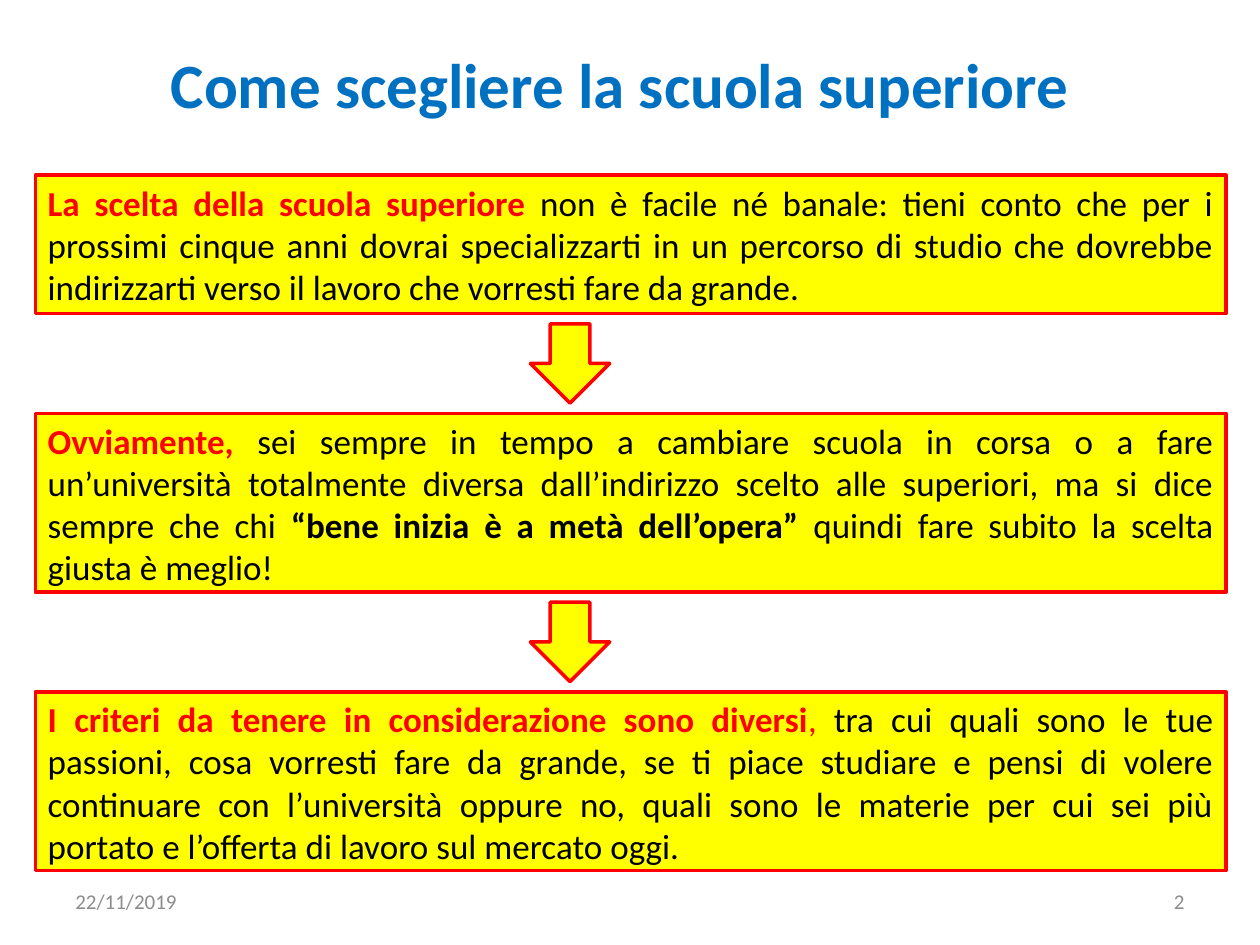
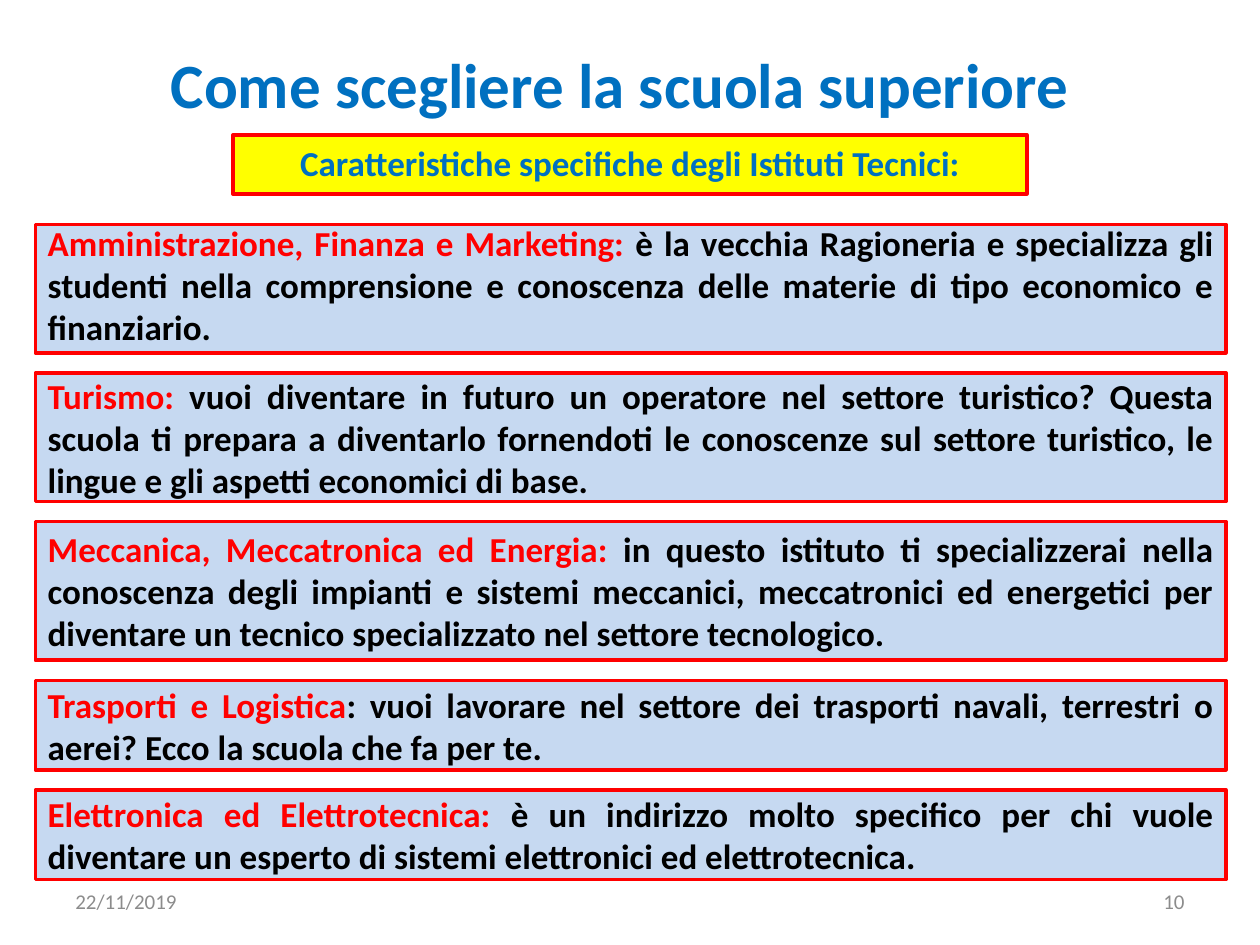
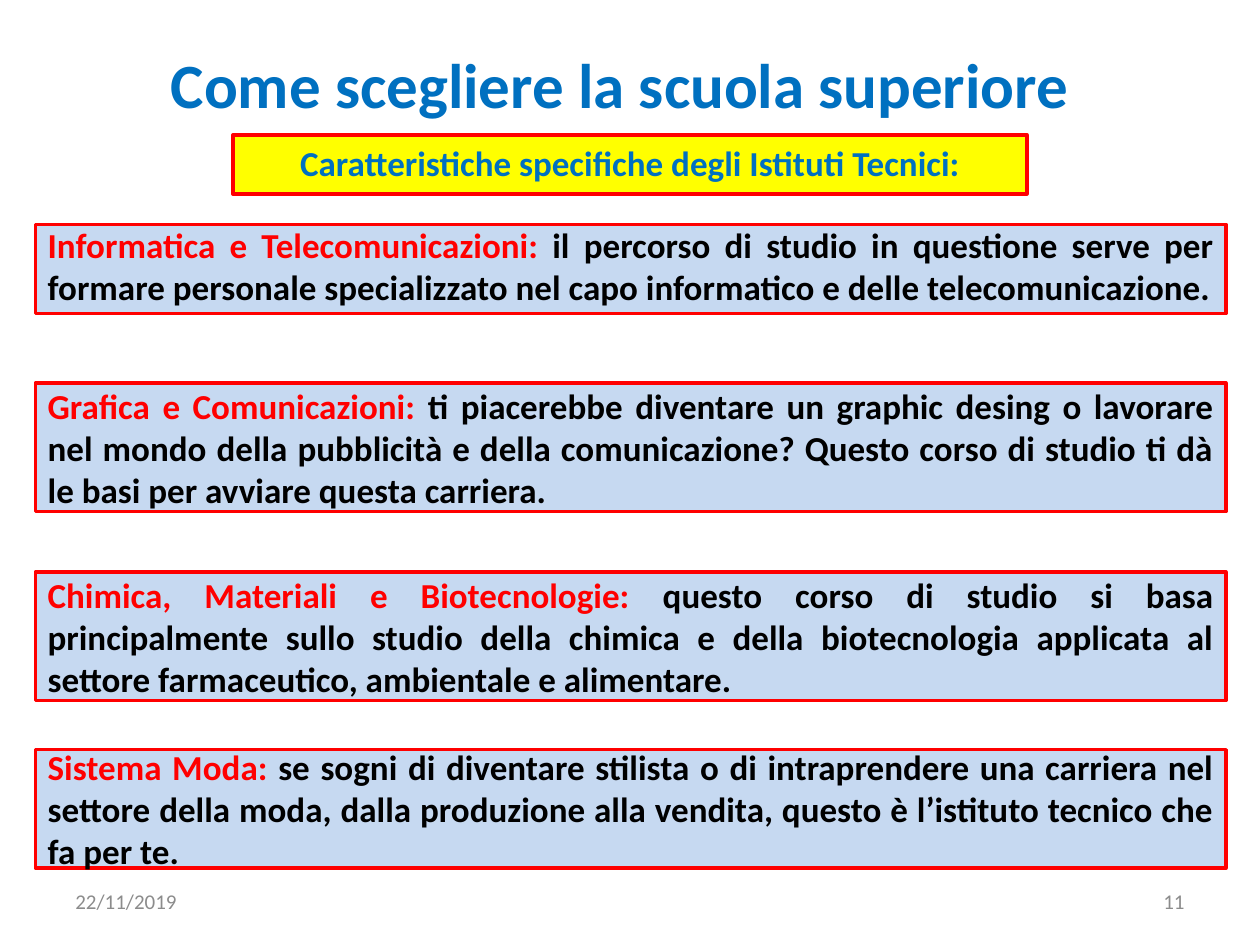
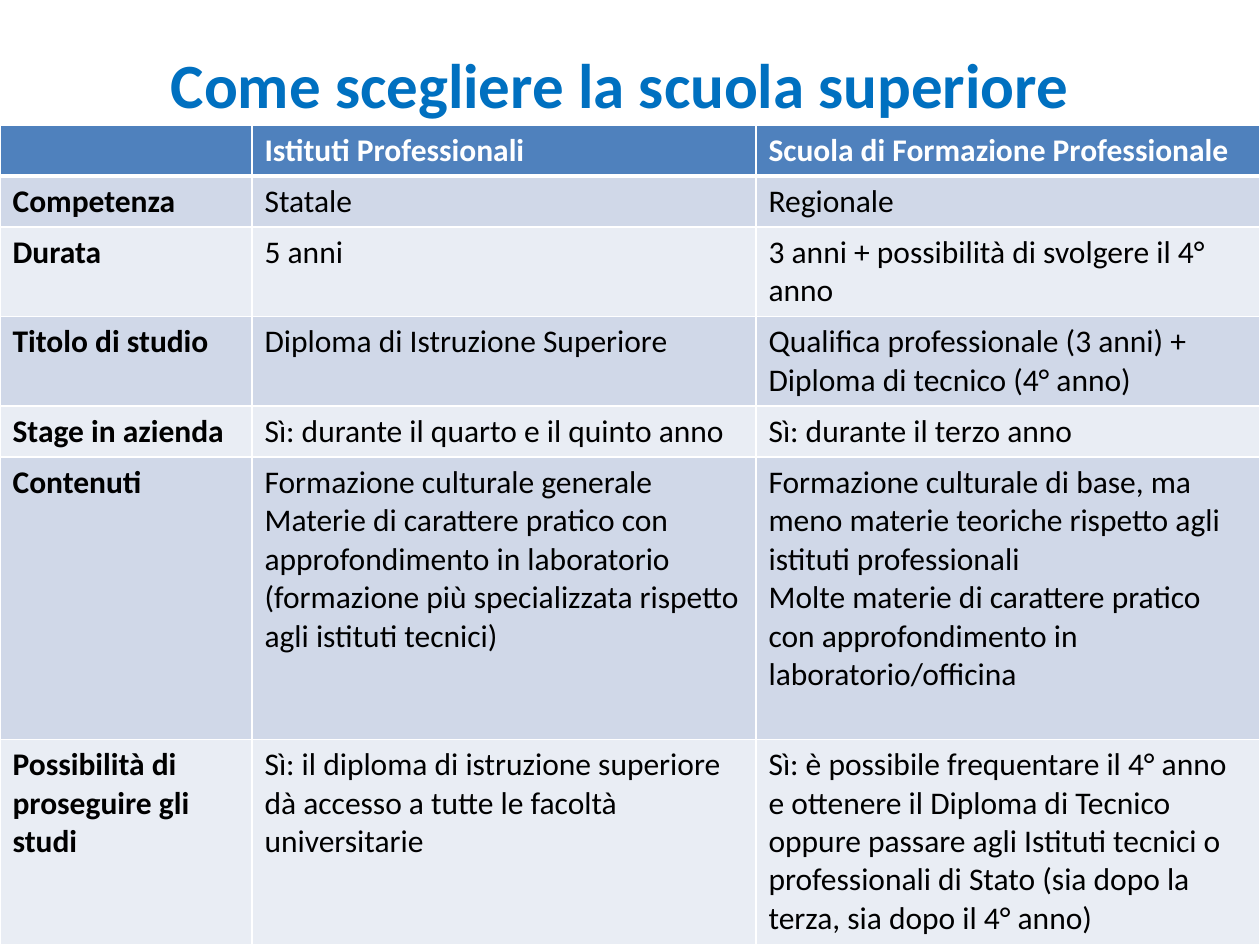
from lxml import etree
from pptx import Presentation
from pptx.dml.color import RGBColor
from pptx.enum.shapes import MSO_SHAPE
from pptx.enum.text import MSO_ANCHOR, MSO_AUTO_SIZE, PP_ALIGN
from pptx.oxml.ns import qn
from pptx.util import Pt

RECTANGLE, DOWN_ARROW = MSO_SHAPE.RECTANGLE, MSO_SHAPE.DOWN_ARROW
TOP, MIDDLE = MSO_ANCHOR.TOP, MSO_ANCHOR.MIDDLE
LEFT, CENTER, RIGHT, JUSTIFY = PP_ALIGN.LEFT, PP_ALIGN.CENTER, PP_ALIGN.RIGHT, PP_ALIGN.JUSTIFY
NO_AUTOFIT = MSO_AUTO_SIZE.NONE

EMU_PER_PX = 9144  # 100 px to the inch
COLORS = {
    "title": "0070C0", "accent": "FF0000", "text": "000000", "footer": "8C8C8C",
    "yellow": "FFFF00", "card": "C6D9F1",
    "header": "4F81BD", "band_dark": "D0D8E8", "band_light": "E9EDF4", "white": "FFFFFF",
}
FONT = "Calibri"
TITLE = "Come scegliere la scuola superiore"
SUBTITLE = "Caratteristiche specifiche degli Istituti Tecnici:"
DATE = "22/11/2019"
BODY_LEFT, BODY_WIDTH = 28, 945
ARROW_LEFT, ARROW_SIZE, ARROW_GAP = 421, 63, 8
CARD_TOP, CARD_GAP = 178, 16


def px(*lengths):
    return [length * EMU_PER_PX for length in lengths]


def rgb(name):
    return RGBColor.from_string(COLORS[name])


def set_all(target, values):
    for name, value in values.items():
        setattr(target, name, value)


class Deck:
    """Holds the shared style and the slide being built."""

    def __init__(self):
        self.file = Presentation()
        self.file.slide_width, self.file.slide_height = px(1000, 750)
        self.page = None

    def add_text(self, frame, paragraphs, size, align=LEFT):
        """Each paragraph is a list of spans: (text, colour, bold)."""
        for index, spans in enumerate(paragraphs):
            para = frame.add_paragraph() if index else frame.paragraphs[0]
            para.alignment = align
            for text, color, bold in spans:
                span = para.add_run()
                span.text = text
                set_all(span.font, {"name": FONT, "size": Pt(size), "bold": bold})
                span.font.color.rgb = rgb(color)

    def add_page(self, number=None):
        self.page = self.file.slides.add_slide(self.file.slide_layouts[5])
        title = self.page.shapes.title
        set_all(title, dict(zip(("left", "top", "width", "height"), px(67, 36, 850, 47))))
        margin_top, margin_bottom = px(13, 0)
        set_all(title.text_frame, {
            "auto_size": NO_AUTOFIT, "word_wrap": True, "vertical_anchor": MIDDLE,
            "margin_top": margin_top, "margin_bottom": margin_bottom,
        })
        self.add_text(title.text_frame, [[(TITLE, "title", True)]], 36, CENTER)
        if number:
            self.footer(50, DATE, LEFT)
            self.footer(717, number, RIGHT)

    def footer(self, left, text, align):
        box = self.page.shapes.add_textbox(*px(left, 695, 233, 40))
        set_all(box.text_frame, {"word_wrap": True, "vertical_anchor": MIDDLE})
        self.add_text(box.text_frame, [[(text, "footer", False)]], 12, align)

    def shape(self, kind, left, top, width, height, fill):
        shape = self.page.shapes.add_shape(kind, *px(left, top, width, height))
        shape.shadow.inherit = False
        shape.fill.solid()
        shape.fill.fore_color.rgb = rgb(fill)
        shape.line.color.rgb = rgb("accent")
        shape.line.width = Pt(2)
        return shape

    def box(self, top, height, spans, fill="yellow", left=BODY_LEFT, width=BODY_WIDTH,
            align=JUSTIFY, anchor=TOP):
        box = self.shape(RECTANGLE, left, top, width, height, fill)
        set_all(box.text_frame, {"word_wrap": True, "vertical_anchor": anchor})
        self.add_text(box.text_frame, [spans], 20, align)
        return box

    def subtitle(self):
        self.box(107, 47, [(SUBTITLE, "title", True)], left=185, width=630, align=CENTER)

    def card(self, top, height, name, text, lift=0):
        """A school card; lift raises the centred text a little."""
        spans = [(name, "accent", True), (text, "text", True)]
        box = self.box(top, height, spans, fill="card", anchor=MIDDLE)
        margin_top, margin_bottom = px(0, 2 * lift)
        set_all(box.text_frame, {"margin_top": margin_top, "margin_bottom": margin_bottom})

    def arrow(self, top):
        self.shape(DOWN_ARROW, ARROW_LEFT, top, ARROW_SIZE, ARROW_SIZE, "yellow")

    def borders(self, cell, top, bottom):
        widths = {"a:lnL": 1, "a:lnR": 1, "a:lnT": top, "a:lnB": bottom}
        properties = cell._tc.get_or_add_tcPr()
        for index, (tag, width) in enumerate(widths.items()):
            line = etree.Element(qn(tag), w=str(int(Pt(width))))
            fill = etree.SubElement(line, qn("a:solidFill"))
            etree.SubElement(fill, qn("a:srgbClr"), val=COLORS["white"])
            properties.insert(index, line)

    def table(self, left, top, widths, heights, rows):
        frame = self.page.shapes.add_table(
            len(rows), len(widths), *px(left, top, sum(widths), sum(heights)))
        table = frame.table
        for column, width in zip(table.columns, px(*widths)):
            column.width = width
        for row, height in zip(table.rows, px(*heights)):
            row.height = height
        for row_index, texts in enumerate(rows):
            is_header = row_index == 0
            band = "header" if is_header else ("band_light", "band_dark")[row_index % 2]
            color = "white" if is_header else "text"
            for column_index, text in enumerate(texts):
                cell = table.cell(row_index, column_index)
                cell.fill.solid()
                cell.fill.fore_color.rgb = rgb(band)
                self.borders(cell, 3 if row_index == 1 else 1, 3 if is_header else 1)
                if text:
                    bold = is_header or column_index == 0
                    lines = [[(line, color, bold)] for line in text.split("\n")]
                    self.add_text(cell.text_frame, lines, 18)


# Advice boxes: height and spans
ADVICE = [
    (110, [
        ("La scelta della scuola superiore", "accent", True),
        (" non è facile né banale: tieni conto che per i prossimi cinque anni dovrai "
         "specializzarti in un percorso di studio che dovrebbe indirizzarti verso il lavoro "
         "che vorresti fare da grande.", "text", False)]),
    (142, [
        ("Ovviamente,", "accent", True),
        (" sei sempre in tempo a cambiare scuola in corsa o a fare un’università totalmente "
         "diversa dall’indirizzo scelto alle superiori, ma si dice sempre che chi ",
         "text", False),
        ("“bene inizia è a metà dell’opera” ", "text", True),
        ("quindi fare subito la scelta giusta è meglio!", "text", False)]),
    (142, [
        ("I criteri da tenere in considerazione sono diversi", "accent", True),
        (",", "accent", False),
        (" tra cui quali sono le tue passioni, cosa vorresti fare da grande, se ti piace "
         "studiare e pensi di volere continuare con l’università oppure no, quali sono le "
         "materie per cui sei più portato e l’offerta di lavoro sul mercato oggi.",
         "text", False)]),
]

# Evenly spaced school cards: height, name, text, lift
FIRST_SCHOOLS = [
    (102, "Amministrazione, Finanza e Marketing: ",
     "è la vecchia Ragioneria e specializza gli studenti nella comprensione e conoscenza "
     "delle materie di tipo economico e finanziario.", 3),
    (102, "Turismo: ",
     "vuoi diventare in futuro un operatore nel settore turistico? Questa scuola ti prepara "
     "a diventarlo fornendoti le conoscenze sul settore turistico, le lingue e gli aspetti "
     "economici di base.", 0),
    (110, "Meccanica, Meccatronica ed Energia: ",
     "in questo istituto ti specializzerai nella conoscenza degli impianti e sistemi "
     "meccanici, meccatronici ed energetici per diventare un tecnico specializzato nel "
     "settore tecnologico.", 0),
    (71, "Trasporti e Logistica",
     ": vuoi lavorare nel settore dei trasporti navali, terrestri o aerei? Ecco la scuola "
     "che fa per te.", 0),
    (71, "Elettronica ed Elettrotecnica: ",
     "è un indirizzo molto specifico per chi vuole diventare un esperto di sistemi "
     "elettronici ed elettrotecnica.", 0),
]

# Freely spaced school cards: top, height, name, text, lift
MORE_SCHOOLS = [
    (CARD_TOP, 71, "Informatica e Telecomunicazioni: ",
     "il percorso di studio in questione serve per formare personale specializzato nel capo "
     "informatico e delle telecomunicazione.", 3),
    (304, 102, "Grafica e Comunicazioni: ",
     "ti piacerebbe diventare un graphic desing o lavorare nel mondo della pubblicità e "
     "della comunicazione? Questo corso di studio ti dà le basi per avviare questa "
     "carriera.", 0),
    (454, 102, "Chimica, Materiali e Biotecnologie: ",
     "questo corso di studio si basa principalmente sullo studio della chimica e della "
     "biotecnologia applicata al settore farmaceutico, ambientale e alimentare.", 0),
    (595, 94, "Sistema Moda:",
     " se sogni di diventare stilista o di intraprendere una carriera nel settore della "
     "moda, dalla produzione alla vendita, questo è l’istituto tecnico che fa per te.", 0),
]

COMPARISON = [
    ("", "Istituti Professionali", "Scuola di Formazione Professionale"),
    ("Competenza", "Statale", "Regionale"),
    ("Durata", "5 anni", "3 anni + possibilità di svolgere il 4° anno"),
    ("Titolo di studio", "Diploma di Istruzione Superiore",
     "Qualifica professionale (3 anni) + Diploma di tecnico (4° anno)"),
    ("Stage in azienda", "Sì: durante il quarto e il quinto anno",
     "Sì: durante il terzo anno"),
    ("Contenuti",
     "Formazione culturale generale\nMaterie di carattere pratico con approfondimento in "
     "laboratorio (formazione più specializzata rispetto agli istituti tecnici)",
     "Formazione culturale di base, ma meno materie teoriche rispetto agli istituti "
     "professionali\nMolte materie di carattere pratico con approfondimento in "
     "laboratorio/officina"),
    ("Possibilità di proseguire gli studi",
     "Sì: il diploma di istruzione superiore dà accesso a tutte le facoltà universitarie",
     "Sì: è possibile frequentare il 4° anno e ottenere il Diploma di Tecnico oppure "
     "passare agli Istituti tecnici o professionali di Stato (sia dopo la terza, sia dopo "
     "il 4° anno)"),
]


def main():
    deck = Deck()

    # Advice boxes joined by arrows
    deck.add_page("2")
    top = 139
    for index, (height, spans) in enumerate(ADVICE):
        if index:
            deck.arrow(top + ARROW_GAP)
            top += ARROW_SIZE + 2 * ARROW_GAP
        deck.box(top, height, spans)
        top += height

    # Technical schools, first part
    deck.add_page("10")
    deck.subtitle()
    top = CARD_TOP
    for height, name, text, lift in FIRST_SCHOOLS:
        deck.card(top, height, name, text, lift)
        top += height + CARD_GAP

    # Technical schools, second part
    deck.add_page("11")
    deck.subtitle()
    for school in MORE_SCHOOLS:
        deck.card(*school)

    # Comparison of vocational schools
    deck.add_page()
    deck.table(0, 99, [200, 400, 400], [40, 40, 71, 71, 40, 224, 163], COMPARISON)

    deck.file.save("out.pptx")


if __name__ == "__main__":
    main()
